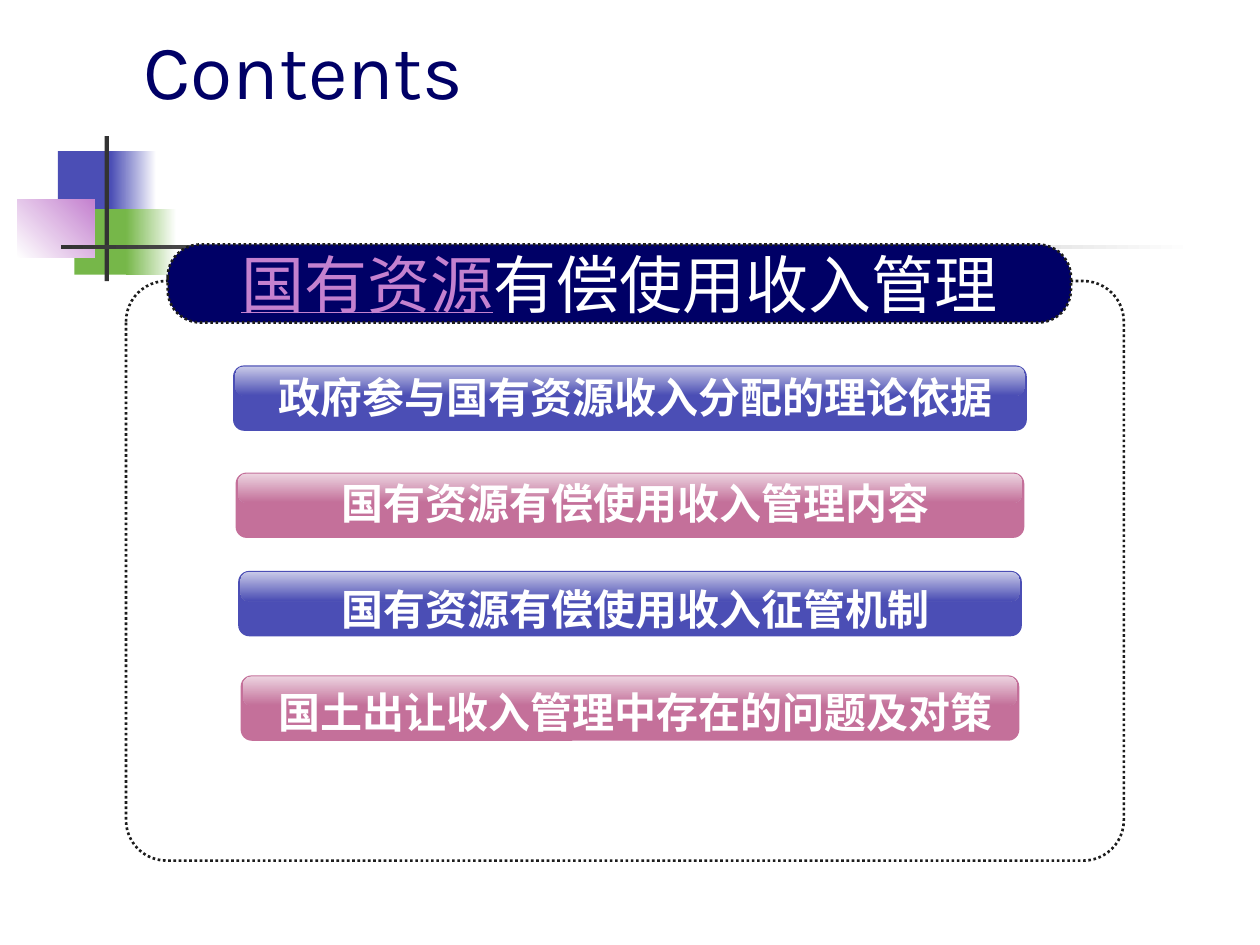
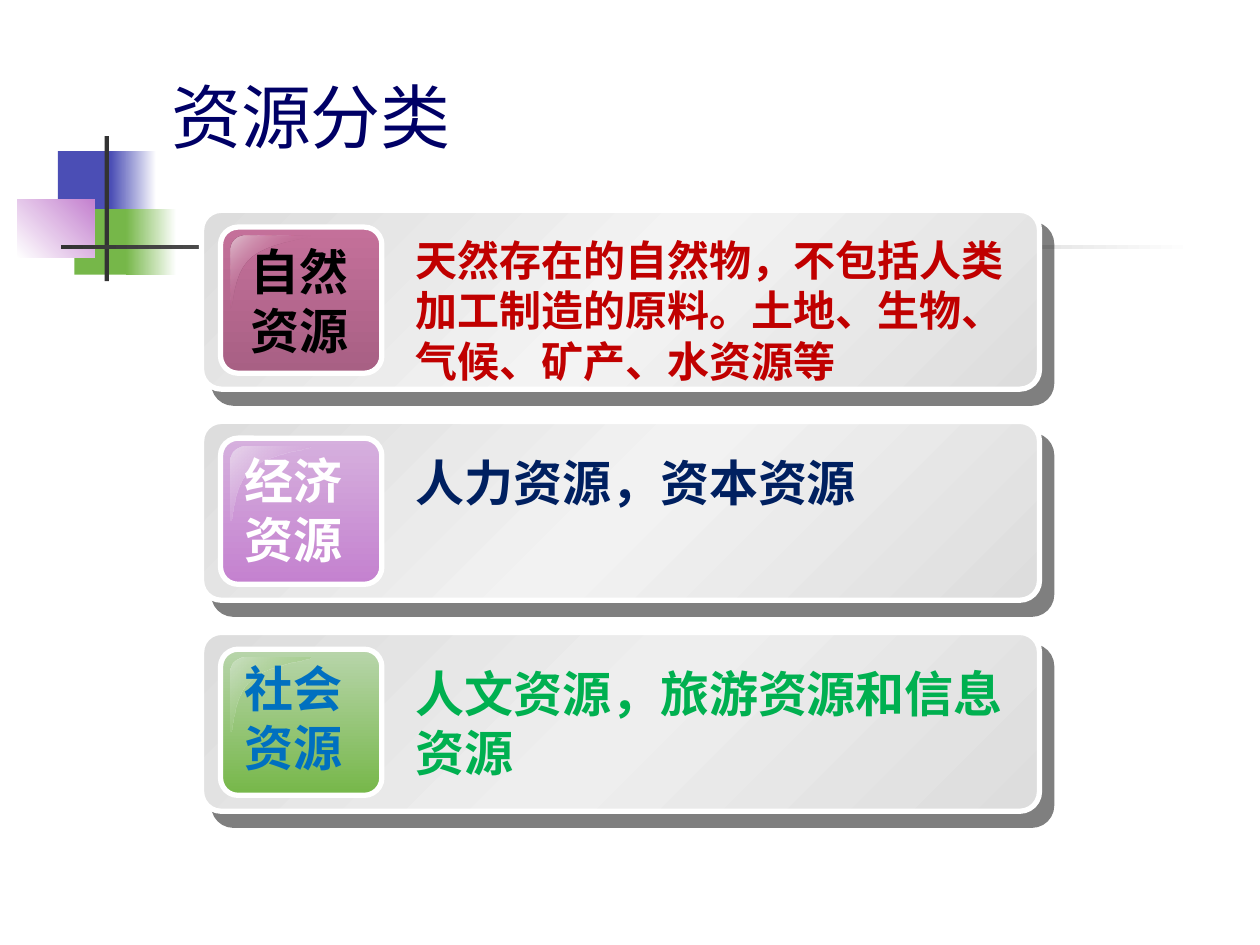
from lxml import etree
from pptx import Presentation
from pptx.dml.color import RGBColor
from pptx.enum.dml import MSO_LINE
from pptx.enum.shapes import MSO_SHAPE
from pptx.enum.text import MSO_ANCHOR, PP_ALIGN
from pptx.oxml.ns import qn
from pptx.util import Pt

RECT, ROUND = MSO_SHAPE.RECTANGLE, MSO_SHAPE.ROUNDED_RECTANGLE
TOP, MIDDLE, BOTTOM = MSO_ANCHOR.TOP, MSO_ANCHOR.MIDDLE, MSO_ANCHOR.BOTTOM
LEFT, CENTER = PP_ALIGN.LEFT, PP_ALIGN.CENTER
DOTS = MSO_LINE.ROUND_DOT
LATIN, HAN = "Karla", "Noto Sans CJK SC"
NAVY, BLUE, GREEN = "000066", "4B4EB5", "76B749"
LILAC, ROSE, DARK = "C481CF", "C4709A", "333333"
WHITE, BLACK, INK, GREY = "FFFFFF", "000000", "1C1C1C", "DDDDDD"
rgb = RGBColor.from_string


def paint(shape, fill, angle=0, edge=None, width=0):
    shape.shadow.inherit = False
    if edge:
        shape.line.color.rgb = rgb(edge)
        shape.line.width = Pt(width)
    else:
        shape.line.fill.background()
    if not fill:
        shape.fill.background()
        return
    shape.fill.solid()
    if isinstance(fill, str):
        shape.fill.fore_color.rgb = rgb(fill)
        return
    props = shape._element.spPr
    grad = etree.Element(qn("a:gradFill"), rotWithShape="1")
    stops = etree.SubElement(grad, qn("a:gsLst"))
    for i, (color, alpha) in enumerate(fill):
        stop = etree.SubElement(stops, qn("a:gs"), pos=str(i * 100000 // (len(fill) - 1)))
        tint = etree.SubElement(stop, qn("a:srgbClr"), val=color)
        if alpha < 100:
            etree.SubElement(tint, qn("a:alpha"), val=str(alpha * 1000))
    etree.SubElement(grad, qn("a:lin"), ang=str(angle * 60000), scaled="0")
    props.replace(props.find(qn("a:solidFill")), grad)


def write(shape, lines, size, bold=True, align=CENTER, anchor=TOP, wrap=False, font=LATIN):
    frame = shape.text_frame
    frame.word_wrap = wrap
    frame.vertical_anchor = anchor
    for i, line in enumerate(lines):
        para = frame.add_paragraph() if i else frame.paragraphs[0]
        para.alignment = align
        for text, color in line:
            run = para.add_run()
            run.text = text
            run.font.size = Pt(size)
            run.font.bold = bold
            run.font.name = font
            run.font.color.rgb = rgb(color)
            etree.SubElement(run._r.get_or_add_rPr(), qn("a:ea"), typeface=font)


decor = [
    (33.1, 86.4, 34.6, 37.4, BLUE, 0),
    (63.4, 86.4, 25.9, 37.4, [(BLUE, 100), (WHITE, 100)], 0),
    (42.5, 119.5, 33.1, 37.4, GREEN, 0),
    (72, 119.5, 28.8, 37.4, [(GREEN, 100), (WHITE, 100)], 0),
    (9.8, 113.8, 44.2, 33.4, [(WHITE, 100), (LILAC, 100)], 315),
    (59.8, 77.8, 2.5, 82.8, DARK, 0),
    (34.6, 140.1, 648, 2.5, [(DARK, 100), (WHITE, 100)], 0),
]
titles = [
    ("Contents", 44, LATIN, (74.9, 18.7, 612, 50.4)),
    ("资源分类", 40, HAN, (90.7, 16.6, 613.4, 77)),
]

deck = Presentation()
deck.slide_width, deck.slide_height = Pt(720), Pt(540)
pages = []
for title, size, font, box in titles:
    page = deck.slides.add_slide(deck.slide_layouts[6]).shapes
    for *area, fill, angle in decor:
        paint(page.add_shape(RECT, *map(Pt, area)), fill, angle)
    head = page.add_textbox(*map(Pt, box))
    write(head, [[(title, NAVY)]], size, False, LEFT, BOTTOM, True, font)
    pages.append(page)
first, second = pages

frame = first.add_shape(ROUND, Pt(72), Pt(160.6), Pt(570.2), Pt(331.2))
frame.adjustments[0] = 0.07
paint(frame, None, 0, INK, 1.5)
frame.line.dash_style = DOTS

topics = [
    ("政府参与国有资源收入分配的理论依据", 208.8, 211.7, BLUE),
    ("国有资源有偿使用收入管理内容", 270, 272.2, ROSE),
    ("国有资源有偿使用收入征管机制", 326.2, 332.6, BLUE),
    ("国土出让收入管理中存在的问题及对策", 385.9, 391.7, ROSE),
]
for i, (topic, top, base, color) in enumerate(topics):
    left = 133.2 + 1.44 * i
    bar = first.add_shape(ROUND, Pt(left), Pt(top), Pt(720 - 2 * left), Pt(37.4))
    bar.adjustments[0] = 0.17
    paint(bar, color)
    left += 1.44
    gloss = first.add_shape(ROUND, Pt(left), Pt(top + 0.7), Pt(720 - 2 * left), Pt(16.6))
    gloss.adjustments[0] = 0.28
    paint(gloss, [(WHITE, 70), (color, 70)], 90)
    label = first.add_textbox(Pt(143), Pt(base), Pt(440), Pt(30.2))
    write(label, [[(topic, WHITE)]], 24, anchor=MIDDLE)

banner = first.add_shape(ROUND, Pt(95.8), Pt(139.7), Pt(516.2), Pt(44.6))
banner.adjustments[0] = 0.42
paint(banner, NAVY, 0, INK, 1.5)
banner.line.dash_style = DOTS
write(banner, [[("国有资源", LILAC), ("有偿使用收入管理", WHITE)]], 36, False, anchor=MIDDLE)
banner.text_frame.paragraphs[0].runs[0].font.underline = True

cards = [
    ("自然", BLACK, 135.4, 14.4, [(ROSE, 100), ("A86084", 100)],
     [("E1C3D0", 100), (ROSE, 0), ("E1C3D0", 100)], "F3F3F3",
     "天然存在的自然物，不包括人类加工制造的原料。土地、生物、气候、矿产、水资源等", 24, "C00000", 10.1, 360),
    ("经济", WHITE, 131.8, 13, [("D6B0DE", 100), (LILAC, 100)],
     [("E8D6EC", 100), (LILAC, 0)], "F2F2F2",
     "人力资源，资本资源", 28, "002060", 14.4, 352),
    ("社会", "0070C0", 131.8, 11.5, [("B8D5AB", 100), (GREEN, 100)],
     [("CCE0C3", 100), (GREEN, 0)], "EEEEEE",
     "人文资源，旅游资源和信息资源", 28, "00B050", 14.4, 352),
]
curves = [
    [(8.6, 0), (3.6, 0), (0, 3.6), (0, 8.6)],
    [(0, 41.8), (2.2, 41.8), (0.7, 21.6), (12.2, 12.2)],
    [(12.2, 12.2), (23.8, 2.9), (46, 2.2), (45.4, 0)],
]
sheen = []
for curve in curves:
    for step in range(13):
        t = step / 12
        mix = [(1 - t) ** 3, 3 * t * (1 - t) ** 2, 3 * t * t * (1 - t), t ** 3]
        sheen.append([sum(m * p[axis] for m, p in zip(mix, curve)) for axis in (0, 1)])

for i, card in enumerate(cards):
    name, color, left, drop, tones, shine, mid, text, size, ink, gap, width = card
    top = 120.2 + 120.6 * i
    panel = second.add_shape(ROUND, Pt(115.2), Pt(top), Pt(478.8), Pt(102.2))
    panel.adjustments[0] = 0.11
    paint(panel, [(GREY, 100), (mid, 100), (GREY, 100)], 45, WHITE, 3)
    effects = panel._element.spPr.find(qn("a:effectLst"))
    shade = etree.SubElement(effects, qn("a:outerShdw"), dist=str(Pt(10.6)),
                             dir=str(49 * 60000), algn="ctr", rotWithShape="0")
    tint = etree.SubElement(shade, qn("a:srgbClr"), val=BLACK)
    etree.SubElement(tint, qn("a:alpha"), val="50000")

    badge = second.add_shape(ROUND, Pt(126), Pt(top + 9.6), Pt(92.2), Pt(83.5))
    badge.adjustments[0] = 0.12
    paint(badge, tones, 90, WHITE, 3)
    points = [(Pt(131.8 + x), Pt(top + 14.6 + y)) for x, y in sheen]
    path = second.build_freeform(*points[0])
    path.add_line_segments(points[1:], close=True)
    paint(path.convert_to_shape(), shine, 45)

    label = second.add_textbox(Pt(left), Pt(top + drop), Pt(71.3), Pt(74.9))
    write(label, [[(name, color)], [("资源", color)]], 28)
    note = second.add_textbox(Pt(230.4), Pt(top + gap), Pt(width), Pt(74.9))
    write(note, [[(text, ink)]], size, align=LEFT, wrap=True)

deck.save("out.pptx")
